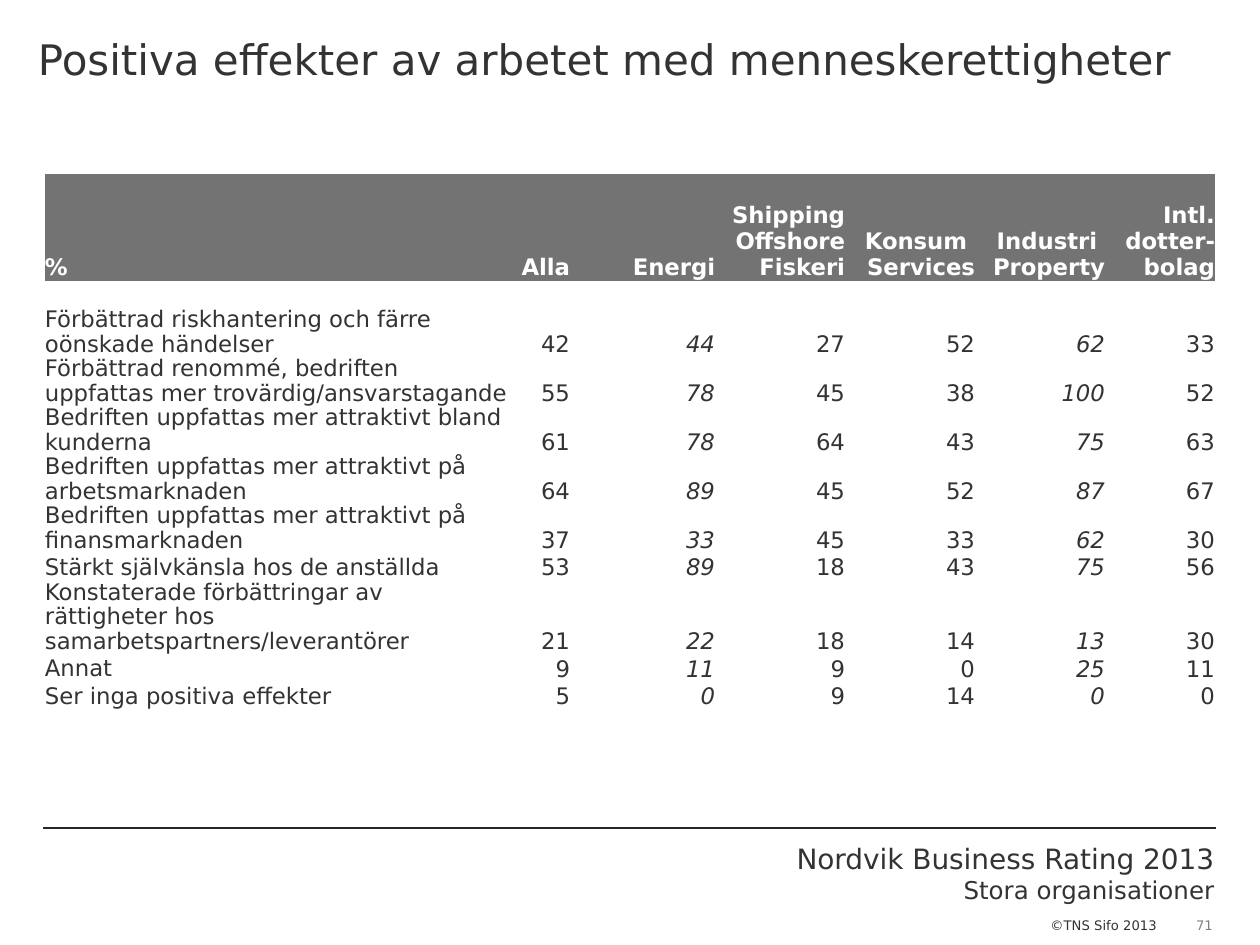
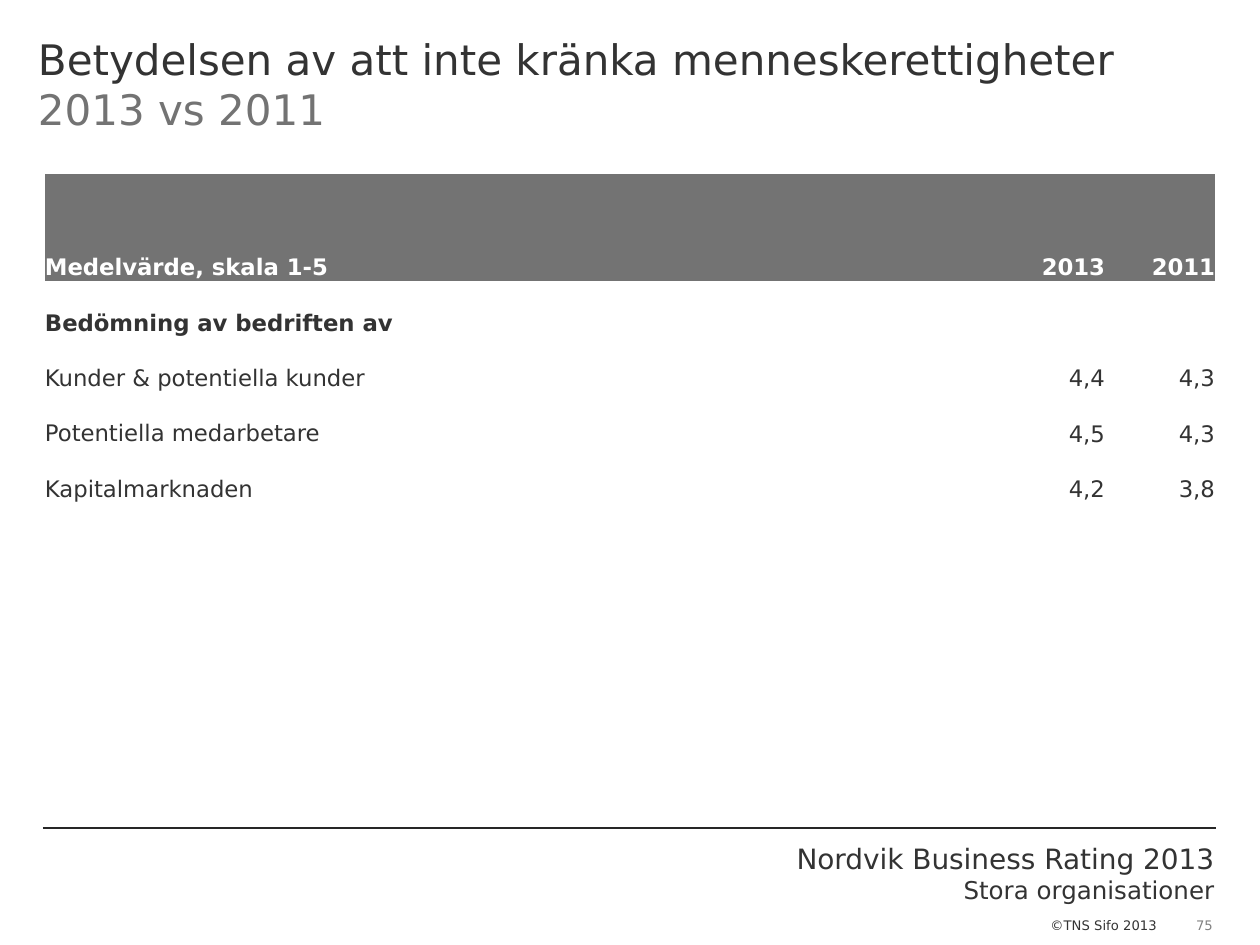
from pptx import Presentation
from pptx.dml.color import RGBColor
from pptx.enum.shapes import MSO_CONNECTOR
from pptx.enum.text import MSO_ANCHOR, MSO_AUTO_SIZE, PP_ALIGN
from pptx.oxml.ns import qn
from pptx.util import Emu, Pt
from lxml.etree import SubElement

COLORS = {"text": "333333", "accent": "737373", "number": "808080",
          "rule": "262626", "white": "FFFFFF"}
FONT = "DejaVu Sans"
NO_STYLE = "{2D5ABB26-0587-4C30-8999-92F81FD0307C}"
FOOTER = [("Nordvik Business Rating 2013", 16), ("Stora organisationer", 14)]
COPYRIGHT = "©TNS Sifo 2013"
COLUMNS = [466, 59, 145, 130, 130, 130, 110]
TABLE_LEFT, TABLE_TOP, HEADER_HEIGHT = 45, 174, 107
EMPTY = ("", [])

SLIDES = [
    {
        "number": "71",
        "title": [("Positiva effekter av arbetet med menneskerettigheter", "text")],
        "header": ["%", "Alla", "Energi", "Shipping\nOffshore\nFiskeri",
                   "Konsum \nServices", "Industri \nProperty", "Intl.\ndotter-\nbolag"],
        "rows": [
            EMPTY,
            ("Förbättrad riskhantering och färre oönskade händelser",
             [42, 44, 27, 52, 62, 33]),
            ("Förbättrad renommé, bedriften uppfattas mer trovärdig/ansvarstagande",
             [55, 78, 45, 38, 100, 52]),
            ("Bedriften uppfattas mer attraktivt bland kunderna",
             [61, 78, 64, 43, 75, 63]),
            ("Bedriften uppfattas mer attraktivt på arbetsmarknaden",
             [64, 89, 45, 52, 87, 67]),
            ("Bedriften uppfattas mer attraktivt på finansmarknaden",
             [37, 33, 45, 33, 62, 30]),
            ("Stärkt självkänsla hos de anställda", [53, 89, 18, 43, 75, 56]),
            ("Konstaterade förbättringar av rättigheter hos samarbetspartners/leverantörer",
             [21, 22, 18, 14, 13, 30]),
            ("Annat", [9, 11, 9, 0, 25, 11]),
            ("Ser inga positiva effekter", [5, 0, 9, 14, 0, 0]),
        ],
        "heights": [27, 49, 49, 49, 49, 49, 27, 74, 27, 27],
        "italic_columns": (2, 5),
        "bold_rows": (),
        "tight_rows": range(2, 9),
    },
    {
        "number": "75",
        "title": [("Betydelsen av att inte kränka menneskerettigheter", "text"),
                  (" 2013 vs 2011", "accent")],
        "header": ["Medelvärde, skala 1-5", "", "", "", "", "2013", "2011"],
        "rows": [
            EMPTY,
            ("Bedömning av bedriften av", []),
            EMPTY,
            ("Kunder & potentiella kunder", ["4,4", "4,3"]),
            EMPTY,
            ("Potentiella medarbetare", ["4,5", "4,3"]),
            EMPTY,
            ("Kapitalmarknaden", ["4,2", "3,8"]),
        ],
        "heights": [27, 28] * 4,
        "italic_columns": (),
        "bold_rows": (2,),
        "tight_rows": (),
    },
]


def px(n):
    return Emu(round(n * 914400 / 126))


def rgb(name):
    return RGBColor.from_string(COLORS[name])


def set_font(font, size, color, bold=False, italic=False):
    font.name, font.size = FONT, Pt(size)
    font.bold, font.italic = bold, italic
    font.color.rgb = rgb(color)


def set_insets(target, left, top, right, bottom):
    target.margin_left, target.margin_top = px(left), px(top)
    target.margin_right, target.margin_bottom = px(right), px(bottom)


def add_text(s, box, lines, color="text", align=PP_ALIGN.LEFT, wrap=True):
    tf = s.shapes.add_textbox(*map(px, box)).text_frame
    tf.word_wrap = wrap
    tf.text = "\n".join(text for text, _ in lines)
    for p, (_, size) in zip(tf.paragraphs, lines):
        p.alignment = align
        set_font(p.font, size, color)
    return tf


def add_title(s, runs):
    sp = s.shapes.title
    sp.left, sp.top, sp.width, sp.height = map(px, (0, 0, 1260, 146))
    tf = sp.text_frame
    tf.word_wrap, tf.auto_size = True, MSO_AUTO_SIZE.NONE
    tf.vertical_anchor = MSO_ANCHOR.TOP
    set_insets(tf, 38, 33, 38, 0)
    p = tf.paragraphs[0]
    p.alignment = PP_ALIGN.LEFT
    for text, color in runs:
        r = p.add_run()
        r.text = text
        set_font(r.font, 24, color)


def add_footer(s, number):
    line = s.shapes.add_connector(MSO_CONNECTOR.STRAIGHT, *map(px, (43, 828, 1216, 828)))
    line.line.color.rgb, line.line.width = rgb("rule"), Pt(0.75)
    SubElement(line._element.spPr, qn("a:effectLst"))
    add_text(s, (650, 835, 577, 77), FOOTER, align=PP_ALIGN.RIGHT)
    add_text(s, (1038, 911, 139, 29), [(COPYRIGHT, 7.5)])
    tf = add_text(s, (1193, 917, 23, 16), [(number, 7.5)], "number", PP_ALIGN.CENTER, False)
    set_insets(tf, 0, 0, 0, 0)


def fill_cell(cell, text, row, col, data):
    header = row == 0
    if header:
        cell.fill.solid()
        cell.fill.fore_color.rgb = rgb("accent")
    else:
        cell.fill.background()
    set_insets(cell, 0, 25 if header and col == len(COLUMNS) - 1 else 0, 0, 0)
    cell.vertical_anchor = MSO_ANCHOR.BOTTOM
    cell.text_frame.text = text
    for p in cell.text_frame.paragraphs:
        p.alignment = PP_ALIGN.RIGHT if col else PP_ALIGN.LEFT
        if not header and col:
            p.line_spacing = 0.9
        elif row in data["tight_rows"]:
            p.line_spacing = Pt(14)
        set_font(p.font, 13, "white" if header else "text",
                 header or row in data["bold_rows"],
                 not header and col in data["italic_columns"])
        if not text:
            p._p.get_or_add_endParaRPr().set("sz", "1300")


def add_results_table(s, data):
    heights = [HEADER_HEIGHT] + data["heights"]
    rows = [data["header"]]
    for label, values in data["rows"]:
        gap = [""] * (len(COLUMNS) - 1 - len(values))
        rows.append([label] + gap + [str(v) for v in values])
    box = (TABLE_LEFT, TABLE_TOP, sum(COLUMNS), sum(heights))
    frame = s.shapes.add_table(len(rows), len(COLUMNS), *map(px, box))
    table = frame.table
    table.first_row = table.horz_banding = False
    frame._element.find(".//" + qn("a:tableStyleId")).text = NO_STYLE
    for column, width in zip(table.columns, COLUMNS):
        column.width = px(width)
    for i, (texts, height) in enumerate(zip(rows, heights)):
        table.rows[i].height = px(height)
        for j, text in enumerate(texts):
            fill_cell(table.cell(i, j), text, i, j, data)


def main():
    prs = Presentation()
    prs.slide_width, prs.slide_height = px(1260), px(945)
    for data in SLIDES:
        s = prs.slides.add_slide(prs.slide_layouts[5])
        add_footer(s, data["number"])
        add_title(s, data["title"])
        add_results_table(s, data)
    prs.save("out.pptx")


if __name__ == "__main__":
    main()
